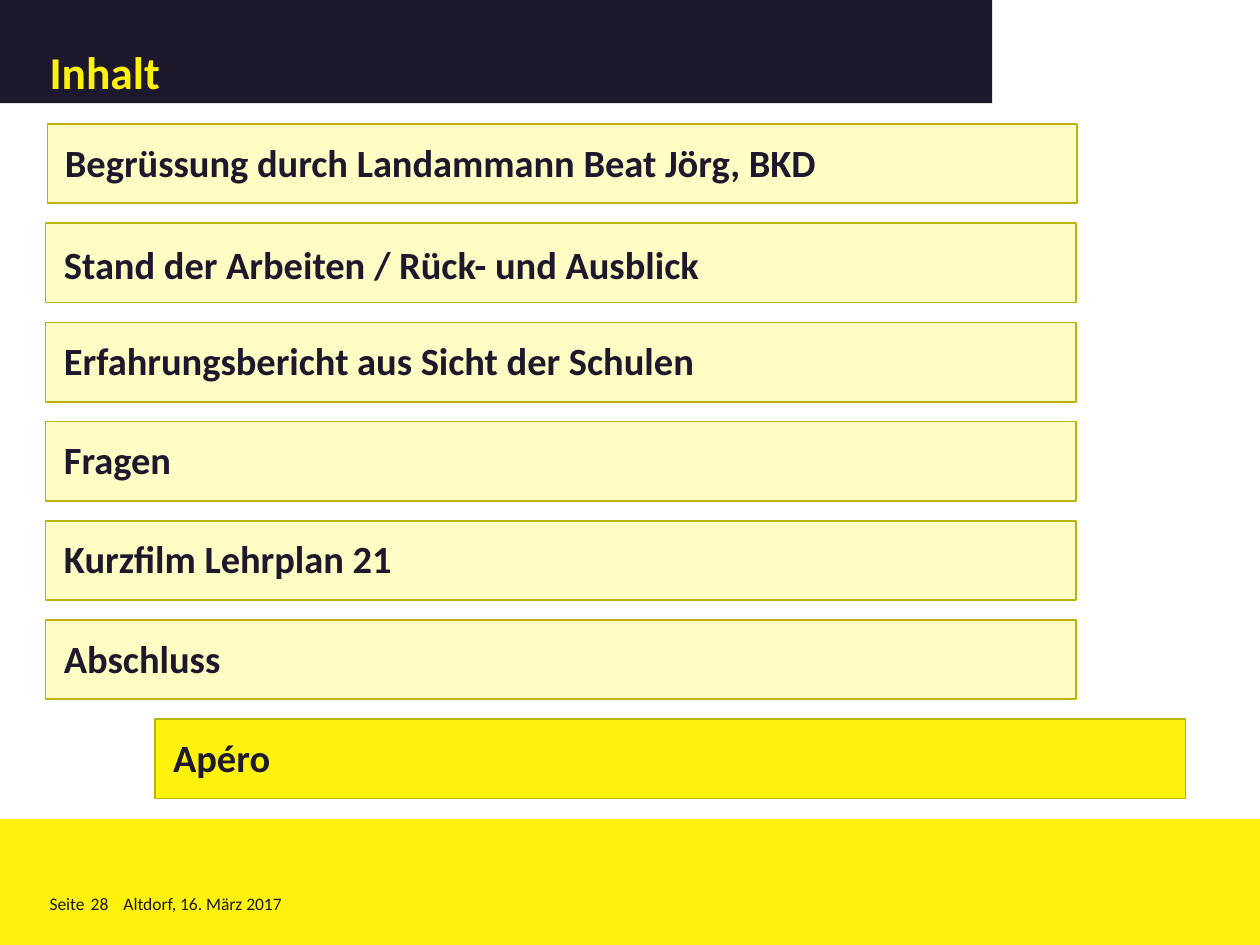
from dataclasses import dataclass

from lxml import etree
from pptx import Presentation
from pptx.dml.color import RGBColor
from pptx.enum.shapes import MSO_SHAPE
from pptx.enum.text import MSO_ANCHOR, MSO_AUTO_SIZE, PP_ALIGN
from pptx.oxml.ns import qn
from pptx.util import Cm, Pt

RECTANGLE = MSO_SHAPE.RECTANGLE
LEFT = PP_ALIGN.LEFT
TOP, BOTTOM = MSO_ANCHOR.TOP, MSO_ANCHOR.BOTTOM
NO_FIT = MSO_AUTO_SIZE.NONE

NAVY = RGBColor(0x1D, 0x18, 0x2C)
YELLOW = RGBColor(0xFE, 0xF2, 0x0A)
PALE = RGBColor(0xFF, 0xFA, 0x9D)
OLIVE = RGBColor(0xBC, 0xB3, 0x07)

FONT = "Calibri"
TITLE_ONLY = 5
FIRST_TOP, PITCH, BAR_HEIGHT = 2.5, 2.0, 1.6
LABEL_HEIGHT = 1.19


@dataclass
class AgendaItem:
    text: str
    left: float = 0.92
    width: float = 20.78
    label_inset: float = 0.12
    label_drop: float = 0.17
    label_width: float = 14.2
    highlighted: bool = False


@dataclass
class FooterPart:
    text: str
    left: float
    width: float


AGENDA = [
    AgendaItem("Begrüssung durch Landammann Beat Jörg, BKD",
               left=0.96, width=20.75, label_inset=0.1, label_width=21.03),
    AgendaItem("Stand der Arbeiten / Rück- und Ausblick",
               label_drop=0.23, label_width=21.06),
    AgendaItem("Erfahrungsbericht aus Sicht der Schulen"),
    AgendaItem("Fragen"),
    AgendaItem("Kurzfilm Lehrplan 21"),
    AgendaItem("Abschluss"),
    AgendaItem("Apéro", left=3.12, highlighted=True),
]

FOOTER = [
    FooterPart("Seite", 1.0, 0.89),
    FooterPart("28", 1.83, 0.76),
    FooterPart("Altdorf, 16. März 2017", 2.49, 5.79),
]


def write(frame, text: str, *, size: float, color: RGBColor,
          bold: bool = False, spacing: float | None = None) -> None:
    para = frame.paragraphs[0]
    para.alignment = LEFT
    if spacing:
        para.line_spacing = spacing
    span = para.add_run()
    span.text = text
    span.font.name = FONT
    span.font.size = Pt(size)
    span.font.bold = bold
    span.font.color.rgb = color


def set_margins(frame, left: float, top: float, right: float, bottom: float) -> None:
    frame.margin_left, frame.margin_top = Cm(left), Cm(top)
    frame.margin_right, frame.margin_bottom = Cm(right), Cm(bottom)


def add_bar(page, left: float, top: float, width: float, height: float, *,
            fill: RGBColor, line: RGBColor | None = None,
            opacity: int = 100) -> None:
    bar = page.shapes.add_shape(RECTANGLE, Cm(left), Cm(top), Cm(width), Cm(height))
    bar.shadow.inherit = False
    bar.fill.solid()
    bar.fill.fore_color.rgb = fill
    if opacity < 100:
        color = bar.fill._xPr.find(qn("a:solidFill"))[0]
        etree.SubElement(color, qn("a:alpha")).set("val", str(opacity * 1000))
    if line is None:
        bar.line.fill.background()
    else:
        bar.line.color.rgb = line
        bar.line.width = Pt(1)


def add_text(page, text: str, left: float, top: float, width: float,
             height: float, *, size: float, bold: bool = False,
             padded: bool = True) -> None:
    box = page.shapes.add_textbox(Cm(left), Cm(top), Cm(width), Cm(height))
    frame = box.text_frame
    frame.word_wrap = True
    frame.vertical_anchor = TOP
    if not padded:
        set_margins(frame, 0, 0, 0, 0)
    write(frame, text, size=size, color=NAVY, bold=bold)


def format_title(page, text: str) -> None:
    title = page.shapes.title
    title.left, title.top = Cm(0), Cm(0)
    title.width, title.height = Cm(20), Cm(2.08)
    title.fill.solid()
    title.fill.fore_color.rgb = NAVY
    frame = title.text_frame
    frame.auto_size = NO_FIT
    frame.word_wrap = True
    frame.vertical_anchor = BOTTOM
    set_margins(frame, 1, 0.2, 0.2, 0.1)
    write(frame, text, size=26, color=YELLOW, bold=True, spacing=0.8)


def add_agenda_item(page, item: AgendaItem, top: float) -> None:
    add_bar(page, item.left, top, item.width, BAR_HEIGHT,
            fill=YELLOW if item.highlighted else PALE, line=OLIVE,
            opacity=100 if item.highlighted else 60)
    add_text(page, item.text, item.left + item.label_inset,
             top + item.label_drop, item.label_width, LABEL_HEIGHT,
             size=22, bold=True)


def main() -> None:
    deck = Presentation()
    deck.slide_width, deck.slide_height = Cm(25.4), Cm(19.05)
    page = deck.slides.add_slide(deck.slide_layouts[TITLE_ONLY])

    # Title band
    format_title(page, "Inhalt")

    # Footer band
    add_bar(page, 0, 16.51, 25.4, 2.54, fill=YELLOW)
    for part in FOOTER:
        add_text(page, part.text, part.left, 18, part.width, 0.43,
                 size=10, padded=False)

    # Agenda
    for row, item in enumerate(AGENDA):
        add_agenda_item(page, item, FIRST_TOP + row * PITCH)

    deck.save("out.pptx")


if __name__ == "__main__":
    main()
